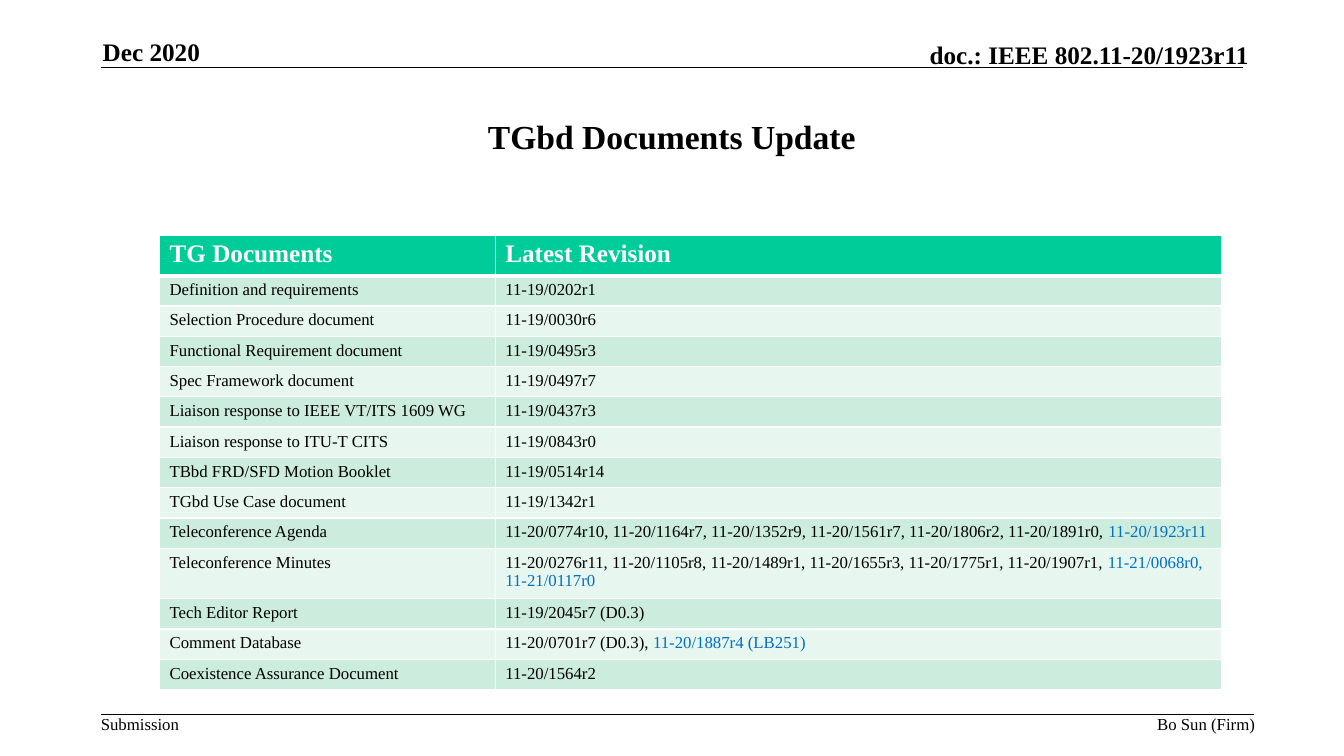
from dataclasses import dataclass

from lxml.etree import SubElement
from pptx import Presentation
from pptx.dml.color import RGBColor
from pptx.enum.shapes import MSO_CONNECTOR
from pptx.enum.text import MSO_ANCHOR, PP_ALIGN
from pptx.oxml.ns import qn
from pptx.util import Cm, Pt


@dataclass(frozen=True)
class Theme:
    font: str = "Times New Roman"
    ink: str = "000000"
    white: str = "FFFFFF"
    updated: str = "0070C0"
    header_fill: str = "00CC99"
    bands: tuple = ("CCECDE", "E7F6EF")
    title_size: int = 24
    heading_size: int = 18
    body_size: int = 12
    thin: int = 1
    thick: int = 3


HEADINGS = ("TG Documents", "Latest Revision")

# Document, settled revisions, newly updated revisions
DOCUMENTS = (
    ("Definition and requirements", "11-19/0202r1", ""),
    ("Selection Procedure document", "11-19/0030r6", ""),
    ("Functional Requirement document", "11-19/0495r3", ""),
    ("Spec Framework document", "11-19/0497r7", ""),
    ("Liaison response to IEEE VT/ITS 1609 WG", "11-19/0437r3", ""),
    ("Liaison response to ITU-T CITS", "11-19/0843r0", ""),
    ("TBbd FRD/SFD Motion Booklet", "11-19/0514r14", ""),
    ("TGbd Use Case document", "11-19/1342r1", ""),
    ("Teleconference Agenda",
     "11-20/0774r10, 11-20/1164r7, 11-20/1352r9, 11-20/1561r7, "
     "11-20/1806r2, 11-20/1891r0, ", "11-20/1923r11"),
    ("Teleconference Minutes",
     "11-20/0276r11, 11-20/1105r8, 11-20/1489r1, 11-20/1655r3, "
     "11-20/1775r1, 11-20/1907r1, ", "11-21/0068r0, 11-21/0117r0"),
    ("Tech Editor Report", "11-19/2045r7 (D0.3)", ""),
    ("Comment Database", "11-20/0701r7 (D0.3), ", "11-20/1887r4 (LB251)"),
    ("Coexistence Assurance Document", "11-20/1564r2", ""),
)


def set_attributes(target, values):
    for name, value in values.items():
        setattr(target, name, value)


class SlideBuilder:
    """Draws styled elements on the current slide; lengths are centimetres."""

    def __init__(self, slide, theme):
        self.slide = slide
        self.theme = theme

    def run(self, paragraph, text, size, color, bold=False):
        run = paragraph.add_run()
        run.text = text
        set_attributes(run.font, {"name": self.theme.font, "size": Pt(size), "bold": bold})
        run.font.color.rgb = RGBColor.from_string(color)

    def text(self, text, box, size, bold=False, align=PP_ALIGN.LEFT, anchor=MSO_ANCHOR.TOP):
        shape = self.slide.shapes.add_textbox(*map(Cm, box))
        set_attributes(shape.text_frame, {
            "word_wrap": True, "vertical_anchor": anchor,
            "margin_left": 0, "margin_right": 0, "margin_top": 0, "margin_bottom": 0,
        })
        paragraph = shape.text_frame.paragraphs[0]
        paragraph.alignment = align
        self.run(paragraph, text, size, self.theme.ink, bold)

    def rule(self, left, right, top):
        connector = self.slide.shapes.add_connector(
            MSO_CONNECTOR.STRAIGHT, Cm(left), Cm(top), Cm(right), Cm(top))
        connector.line.width = Pt(self.theme.thin)
        connector.line.color.rgb = RGBColor.from_string(self.theme.ink)
        SubElement(connector._element.spPr, qn("a:effectLst"))

    def border(self, cell, side, width):
        properties = cell._tc.get_or_add_tcPr()
        line = SubElement(properties, qn(f"a:ln{side}"), w=str(Pt(width)))
        fill = SubElement(line, qn("a:solidFill"))
        SubElement(fill, qn("a:srgbClr"), val=self.theme.white)

    def cell(self, cell, runs, size, fill, widths, bold=False):
        """Fill a cell with (text, colour) runs and edges in L, R, T, B order."""
        for side, width in zip("LRTB", widths):
            self.border(cell, side, width)
        cell.fill.solid()
        cell.fill.fore_color.rgb = RGBColor.from_string(fill)
        for text, color in runs:
            if text:
                self.run(cell.text_frame.paragraphs[0], text, size, color, bold)

    def document_table(self, left, top, column_widths, header_height, row_height, tall_height):
        theme = self.theme
        heights = [header_height] + [
            tall_height if name == "Teleconference Minutes" else row_height
            for name, _, _ in DOCUMENTS]
        table = self.slide.shapes.add_table(
            len(heights), len(column_widths), Cm(left), Cm(top),
            Cm(sum(column_widths)), Cm(sum(heights))).table
        for column, width in zip(table.columns, column_widths):
            column.width = Cm(width)
        for row, height in zip(table.rows, heights):
            row.height = Cm(height)

        thin, thick = theme.thin, theme.thick
        for column, heading in enumerate(HEADINGS):
            self.cell(table.cell(0, column), [(heading, theme.white)], theme.heading_size,
                      theme.header_fill, (thin, thin, thin, thick), bold=True)
        for row, (name, settled, updated) in enumerate(DOCUMENTS, start=1):
            fill = theme.bands[(row - 1) % len(theme.bands)]
            widths = (thin, thin, thick if row == 1 else thin, thin)
            contents = ([(name, theme.ink)], [(settled, theme.ink), (updated, theme.updated)])
            for column, runs in enumerate(contents):
                self.cell(table.cell(row, column), runs, theme.body_size, fill, widths)


def main():
    presentation = Presentation()
    set_attributes(presentation, {"slide_width": Cm(33.87), "slide_height": Cm(19.05)})
    theme = Theme()
    builder = SlideBuilder(presentation.slides.add_slide(presentation.slide_layouts[6]), theme)

    builder.rule(2.54, 31.33, 1.7)
    builder.text("Dec 2020", (2.59, 0.92, 6.93, 0.76), theme.heading_size, bold=True,
                 anchor=MSO_ANCHOR.BOTTOM)
    builder.text("doc.: IEEE 802.11-20/1923r11", (18.52, 0.99, 12.95, 0.76),
                 theme.heading_size, bold=True, align=PP_ALIGN.RIGHT, anchor=MSO_ANCHOR.BOTTOM)

    builder.text("TGbd Documents Update", (2.54, 1.95, 28.78, 2.95), theme.title_size, bold=True,
                 align=PP_ALIGN.CENTER, anchor=MSO_ANCHOR.MIDDLE)
    builder.document_table(4.02, 5.93, (8.46, 18.31), header_height=0.94,
                           row_height=0.72, tall_height=1.18)

    builder.rule(2.54, 31.6, 18)
    builder.text("Submission", (2.54, 17.98, 1.98, 0.51), theme.body_size)
    builder.text("Bo Sun (Firm)", (19.84, 17.98, 11.79, 0.51), theme.body_size,
                 align=PP_ALIGN.RIGHT)
    presentation.save("out.pptx")


if __name__ == "__main__":
    main()
